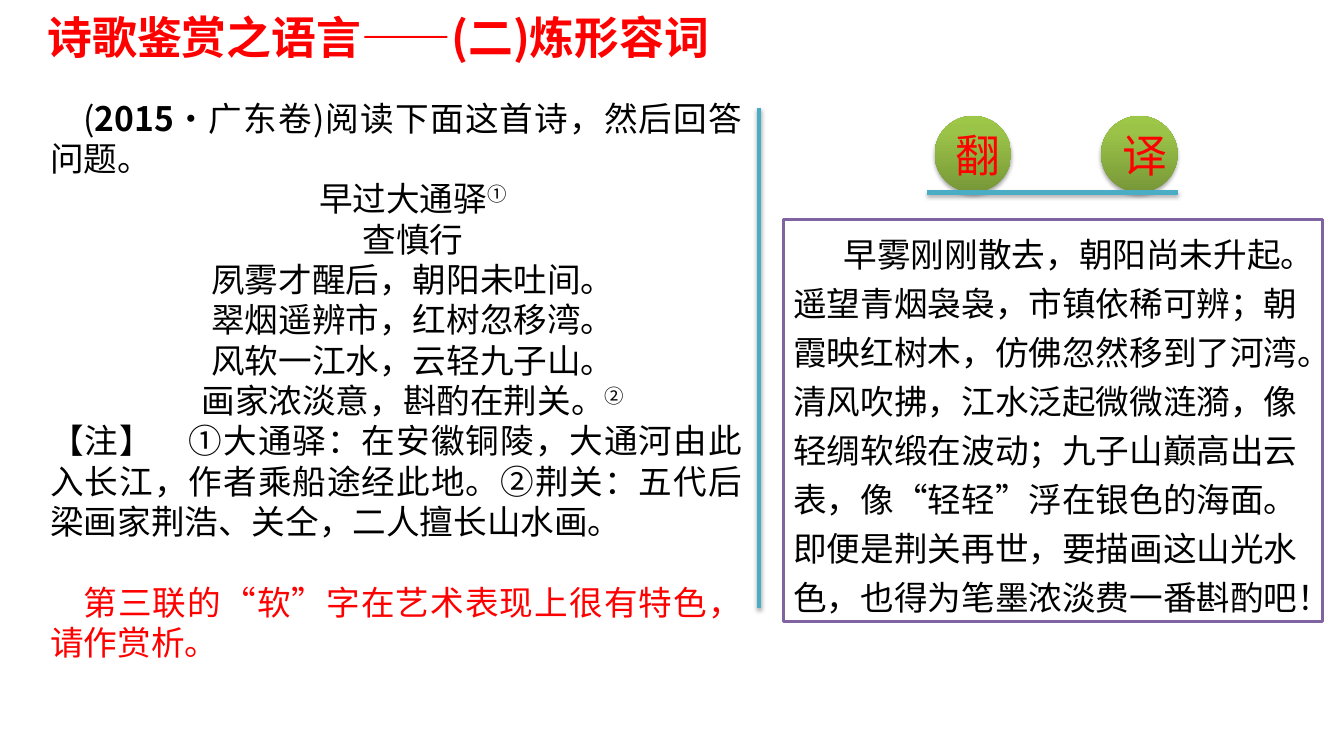
from pptx import Presentation
from pptx.dml.color import RGBColor
from pptx.enum.lang import MSO_LANGUAGE_ID as Lang
from pptx.enum.shapes import MSO_CONNECTOR as Conn, MSO_SHAPE as Shape
from pptx.enum.text import MSO_ANCHOR as Anchor, MSO_AUTO_SIZE as AutoSize, PP_ALIGN as Align
from pptx.oxml import parse_xml
from pptx.oxml.ns import nsdecls, qn
from pptx.util import Inches, Pt

FONT = "Noto Sans CJK SC"
RED = RGBColor(0xFF, 0x00, 0x00)
BLACK = RGBColor(0x00, 0x00, 0x00)
WHITE = RGBColor(0xFF, 0xFF, 0xFF)
PURPLE = RGBColor(0x80, 0x64, 0xA2)
TEAL = RGBColor(0x4B, 0xAC, 0xC6)
GREENS = [(0, RGBColor(0x77, 0x97, 0x37)), (80, RGBColor(0x9B, 0xC3, 0x48)),
          (100, RGBColor(0x9D, 0xC7, 0x46))]

TITLE = "诗歌鉴赏之语言——(二)炼形容词"
HEADING = [("(", {}), ("2015", {"bold": True}), ("·广东卷)阅读下面这首诗，然后回答问题。", {})]
POEM = [("早过大通驿", "①"), ("查慎行", ""), ("夙雾才醒后，朝阳未吐间。", ""),
        ("翠烟遥辨市，红树忽移湾。", ""), ("风软一江水，云轻九子山。", ""),
        ("画家浓淡意，斟酌在荆关。", "②")]
NOTE = ("【注】　①大通驿：在安徽铜陵，大通河由此入长江，作者乘船途经此地。"
        "②荆关：五代后梁画家荆浩、关仝，二人擅长山水画。")
QUESTION = "第三联的“软”字在艺术表现上很有特色，请作赏析。"
TRANSLATION = ("早雾刚刚散去，朝阳尚未升起。遥望青烟袅袅，市镇依稀可辨；"
               "朝霞映红树木，仿佛忽然移到了河湾。清风吹拂，江水泛起微微涟漪，"
               "像轻绸软缎在波动；九子山巅高出云表，像“轻轻”浮在银色的海面。"
               "即便是荆关再世，要描画这山光水色，也得为笔墨浓淡费一番斟酌吧！")


def add_run(p, text, size=24, color=BLACK, superscript=False, bold=False):
    r = p.add_run()
    r.text = text
    values = {"name": FONT, "size": Pt(size), "bold": bold,
              "language_id": Lang.SIMPLIFIED_CHINESE}
    for name, value in values.items():
        setattr(r.font, name, value)
    r.font.color.rgb = color
    r.font._element.append(parse_xml(f'<a:ea {nsdecls("a")} typeface="{FONT}"/>'))
    if superscript:
        r.font._element.set("baseline", "30000")


def add_paragraph(tf, runs, align, indent=0, spacing=28.8, before=0):
    p = tf.paragraphs[0]
    if p.runs:
        p = tf.add_paragraph()
    values = {"alignment": align, "line_spacing": Pt(spacing),
              "space_before": Pt(before), "space_after": Pt(0)}
    for name, value in values.items():
        setattr(p, name, value)
    pPr = p._p.get_or_add_pPr()
    pPr.set("marL", "0")
    pPr.set("indent", str(Inches(indent)))
    for text, style in runs:
        add_run(p, text, **style)


def set_frame(tf, anchor=Anchor.TOP):
    values = {"word_wrap": True, "auto_size": AutoSize.NONE, "vertical_anchor": anchor}
    for name, value in values.items():
        setattr(tf, name, value)
    return tf


def add_shadow(spPr):
    effects = spPr.find(qn("a:effectLst"))
    if effects is None:
        effects = parse_xml(f'<a:effectLst {nsdecls("a")}/>')
        spPr.append(effects)
    effects.append(parse_xml(
        f'<a:outerShdw {nsdecls("a")} blurRad="{Pt(3.1)}" dist="{Pt(1.8)}" dir="5400000" '
        'rotWithShape="0"><a:srgbClr val="000000"><a:alpha val="35000"/></a:srgbClr>'
        '</a:outerShdw>'))


def add_title(s):
    title = s.shapes.title
    box = {"left": 0.37, "top": 0.05, "width": 7.48, "height": 0.64}
    for name, value in box.items():
        setattr(title, name, Inches(value))
    runs = [(TITLE, {"size": 32, "color": RED, "bold": True})]
    add_paragraph(set_frame(title.text_frame), runs, Align.LEFT, spacing=38.4)


def add_poem(s):
    sp = s.shapes.add_textbox(Inches(0.4), Inches(0.92), Inches(7.06), Inches(5.76))
    tf = set_frame(sp.text_frame)
    add_paragraph(tf, HEADING, Align.JUSTIFY, 0.33)
    for verse, mark in POEM:
        runs = [(verse, {})]
        if mark:
            runs.append((mark, {"superscript": True}))
        add_paragraph(tf, runs, Align.CENTER, 0.33)
    add_paragraph(tf, [(NOTE, {})], Align.JUSTIFY)
    add_paragraph(tf, [(QUESTION, {"color": RED})], Align.JUSTIFY, 0.33, before=28.8)


def add_translation(s):
    sp = s.shapes.add_shape(Shape.RECTANGLE, Inches(7.77), Inches(2.18),
                            Inches(5.35), Inches(3.99))
    sp.shadow.inherit = False
    sp.fill.solid()
    sp.fill.fore_color.rgb = WHITE
    sp.line.color.rgb = PURPLE
    sp.line.width = Pt(2)
    add_paragraph(set_frame(sp.text_frame), [(TRANSLATION, {})], Align.LEFT, 0.5, spacing=35)


def add_ball(s, left, text):
    sp = s.shapes.add_shape(Shape.OVAL, Inches(left), Inches(1.15), Inches(0.76), Inches(0.76))
    sp.line.fill.background()
    sp.shadow.inherit = False
    sp.fill.gradient()
    sp.fill.gradient_angle = 90
    stops = sp._element.spPr.find(qn("a:gradFill")).find(qn("a:gsLst"))
    for stop in list(stops):
        stops.remove(stop)
    for position, color in GREENS:
        stops.append(parse_xml(f'<a:gs {nsdecls("a")} pos="{position * 1000}">'
                               f'<a:srgbClr val="{color}"/></a:gs>'))
    add_shadow(sp._element.spPr)
    add_paragraph(set_frame(sp.text_frame, Anchor.MIDDLE),
                  [(text, {"size": 32, "color": RED})], Align.CENTER, spacing=38.4)


def add_rule(s, x1, y1, x2, y2):
    line = s.shapes.add_connector(Conn.STRAIGHT, Inches(x1), Inches(y1), Inches(x2), Inches(y2))
    line.line.color.rgb = TEAL
    line.line.width = Pt(3)
    add_shadow(line._element.spPr)


def main():
    prs = Presentation()
    prs.slide_width, prs.slide_height = Inches(13.33), Inches(7.5)
    s = prs.slides.add_slide(prs.slide_layouts[5])

    # Title and poem on the left
    add_title(s)
    add_poem(s)

    # Translation on the right, under its two-ball heading
    add_translation(s)
    for left, text in ((9.27, "翻"), (10.92, "译")):
        add_ball(s, left, text)
    add_rule(s, 9.19, 1.91, 11.68, 1.91)

    # Divider between the halves
    add_rule(s, 7.53, 1.07, 7.53, 6.03)

    prs.save("out.pptx")


if __name__ == "__main__":
    main()
